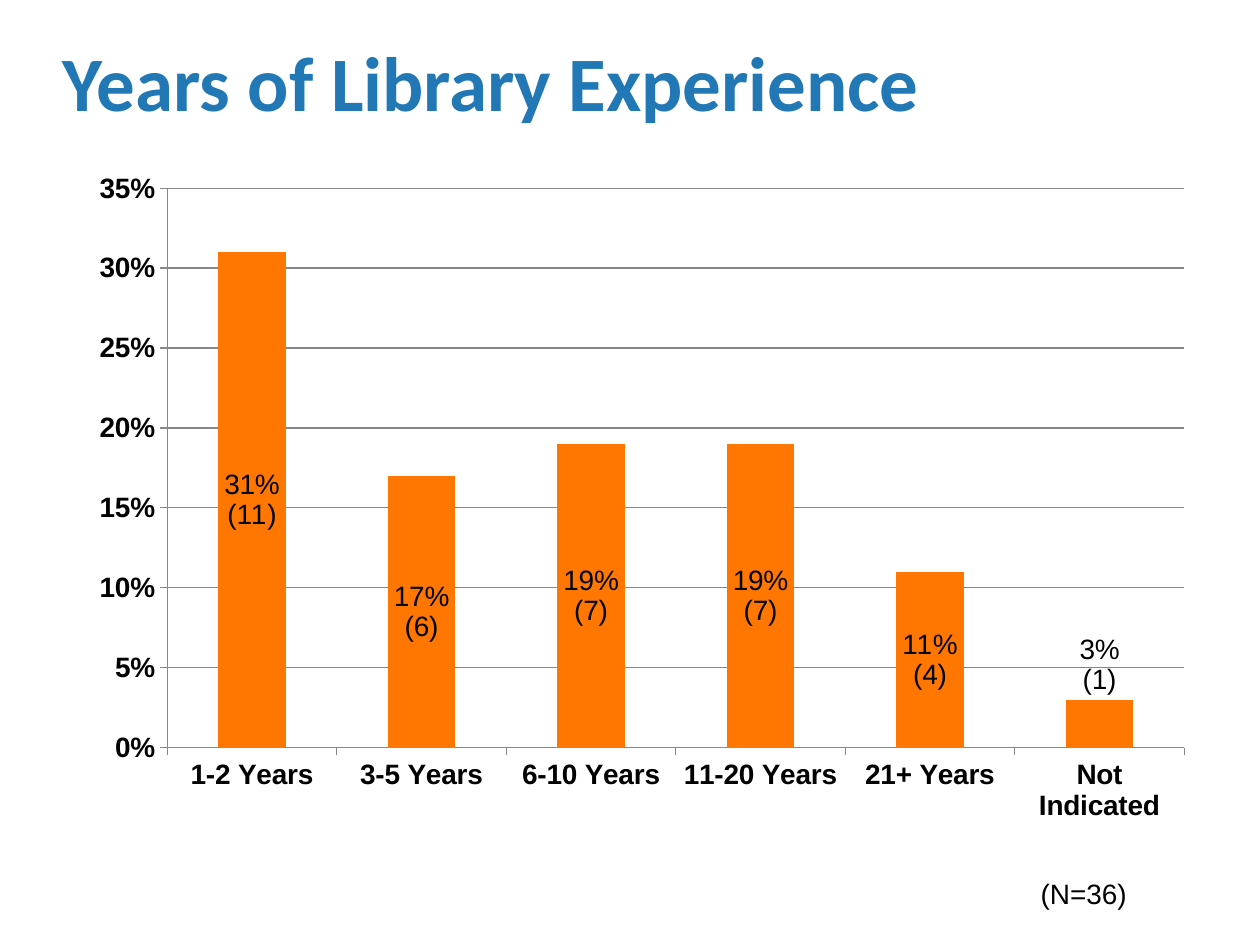
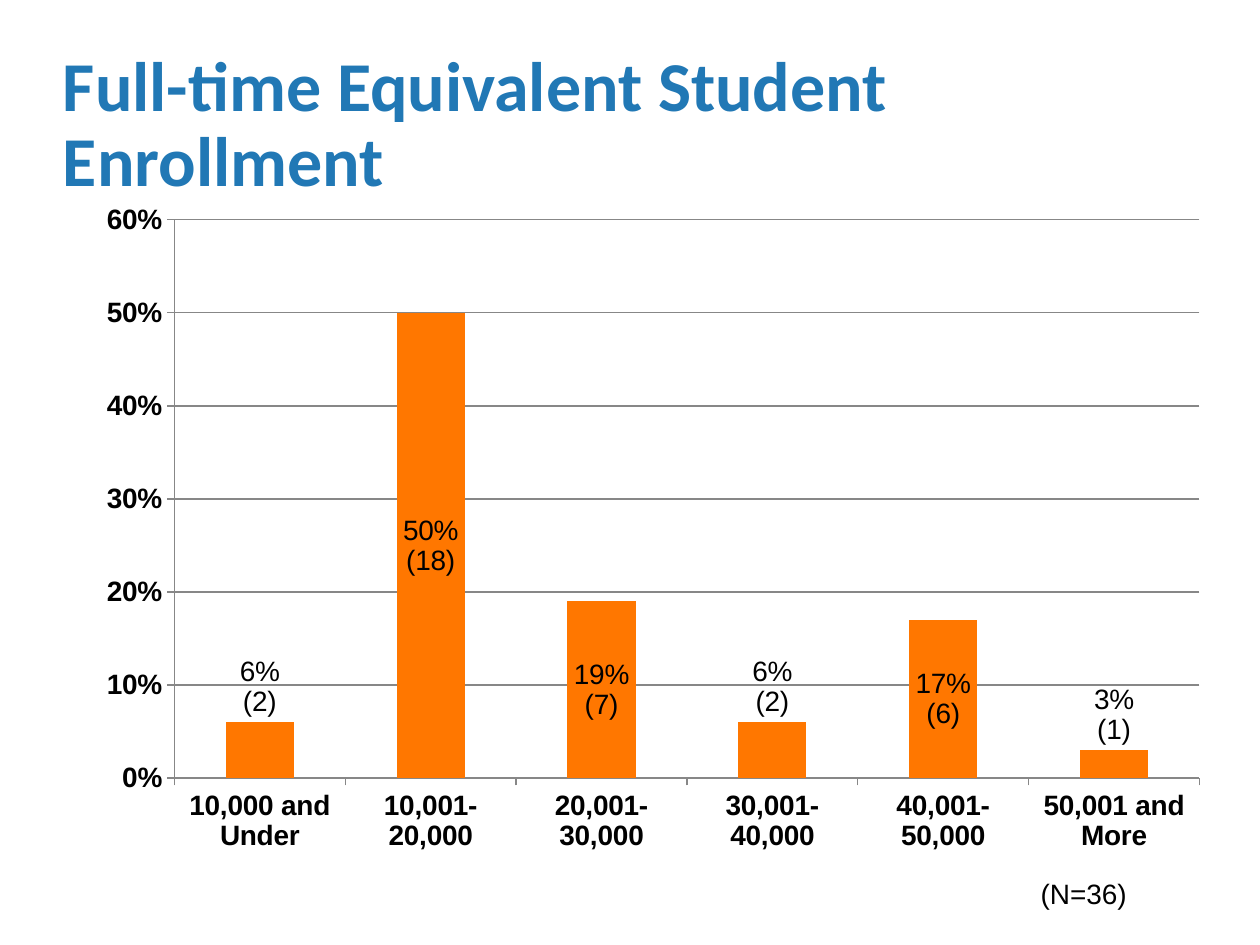
from dataclasses import dataclass

from lxml.etree import SubElement
from pptx import Presentation
from pptx.chart.data import CategoryChartData
from pptx.dml.color import RGBColor
from pptx.enum.chart import XL_CHART_TYPE, XL_LABEL_POSITION, XL_TICK_MARK
from pptx.enum.text import MSO_ANCHOR
from pptx.oxml.ns import qn
from pptx.util import Cm, Pt


@dataclass(frozen=True)
class Theme:
    title_color: RGBColor = RGBColor(0x21, 0x78, 0xB5)
    bar_color: RGBColor = RGBColor(0xFF, 0x77, 0x00)
    line_color: RGBColor = RGBColor(0x87, 0x87, 0x87)
    text_color: RGBColor = RGBColor(0, 0, 0)
    title_font: str = "Calibri"
    body_font: str = "Arial"
    body_size: int = 16


THEME = Theme()
PERCENT = "0%"
RESPONDENTS = 36
LOW_BAR = 0.1  # labels of shorter bars stand above them
PLOT_AREA = {"x": 0.08, "y": 0.04, "w": 0.9, "h": 0.83}  # shares of the chart frame


def style_font(font, size, color, name, bold=False):
    font.size = Pt(size)
    font.color.rgb = color
    font.name = name
    font.bold = bold


def style_body(font, bold=False):
    style_font(font, THEME.body_size, THEME.text_color, THEME.body_font, bold)


def add_text_box(slide, left, top, width, height):
    frame = slide.shapes.add_textbox(Cm(left), Cm(top), Cm(width), Cm(height)).text_frame
    frame.word_wrap = True
    return frame


def add_title(slide, text, size, height):
    frame = add_text_box(slide, 0, 0, 25.4, height)
    frame.vertical_anchor = MSO_ANCHOR.TOP
    frame.margin_left = frame.margin_right = Cm(1.27)
    frame.margin_top, frame.margin_bottom = Cm(1.02), Cm(0.89)
    paragraph = frame.paragraphs[0]
    paragraph.line_spacing = 0.9
    run = paragraph.add_run()
    run.text = text
    style_font(run.font, size, THEME.title_color, THEME.title_font, bold=True)


def add_sample_note(slide):
    frame = add_text_box(slide, 20.73, 17.55, 3.78, 0.94)
    run = frame.paragraphs[0].add_run()
    run.text = f"(N={RESPONDENTS})"
    style_body(run.font)


def style_axis(axis):
    axis.major_tick_mark = XL_TICK_MARK.OUTSIDE
    axis.minor_tick_mark = XL_TICK_MARK.NONE
    axis.format.line.color.rgb = THEME.line_color
    style_body(axis.tick_labels.font, bold=True)


def fix_plot_area(chart):
    plot_area = chart.plots[0]._element.getparent()
    layout = plot_area.find(qn("c:layout"))
    if layout is None:
        layout = SubElement(plot_area, qn("c:layout"))
        plot_area.insert(0, layout)
    manual = SubElement(layout, qn("c:manualLayout"))
    settings = {"layoutTarget": "inner", "xMode": "edge", "yMode": "edge", **PLOT_AREA}
    for name, value in settings.items():
        SubElement(manual, qn(f"c:{name}")).set("val", str(value))


def label_bar(point, share, count):
    label = point.data_label
    frame = label.text_frame
    lines = (f"{share:.0%}", f"({count})")
    for index, line in enumerate(lines):
        paragraph = frame.add_paragraph() if index else frame.paragraphs[0]
        run = paragraph.add_run()
        run.text = line
        style_body(run.font)
    label.position = (XL_LABEL_POSITION.OUTSIDE_END if share < LOW_BAR
                      else XL_LABEL_POSITION.CENTER)


def add_share_chart(slide, box, counts, maximum, step):
    shares = [round(count / RESPONDENTS, 2) for count in counts.values()]
    data = CategoryChartData(number_format=PERCENT)
    data.categories = list(counts)
    data.add_series("Series 1", shares)
    chart = slide.shapes.add_chart(
        XL_CHART_TYPE.COLUMN_CLUSTERED, *(Cm(length) for length in box), data).chart
    chart.has_legend = False
    chart.has_title = False
    style_body(chart.font, bold=True)
    fix_plot_area(chart)

    # Axes and gridlines
    style_axis(chart.category_axis)
    value_axis = chart.value_axis
    style_axis(value_axis)
    value_axis.minimum_scale, value_axis.maximum_scale = 0, maximum
    value_axis.major_unit = step
    value_axis.tick_labels.number_format = PERCENT
    value_axis.tick_labels.number_format_is_linked = False
    value_axis.has_major_gridlines = True
    value_axis.major_gridlines.format.line.color.rgb = THEME.line_color

    # Bars and their labels
    plot = chart.plots[0]
    plot.vary_by_categories = False
    plot.gap_width = 150
    series = plot.series[0]
    series.format.fill.solid()
    series.format.fill.fore_color.rgb = THEME.bar_color
    labels = series.data_labels
    labels.show_value = True
    labels.number_format = PERCENT
    labels.number_format_is_linked = False
    labels.position = XL_LABEL_POSITION.CENTER
    style_body(labels.font)
    for index, (share, count) in enumerate(zip(shares, counts.values())):
        label_bar(series.points[index], share, count)


def add_survey_slide(presentation, title, title_size, title_height, **chart):
    slide = presentation.slides.add_slide(presentation.slide_layouts[6])
    add_title(slide, title, title_size, title_height)
    add_share_chart(slide, **chart)
    add_sample_note(slide)


def main():
    presentation = Presentation()
    presentation.slide_width, presentation.slide_height = Cm(25.4), Cm(19.05)

    # Experience
    add_survey_slide(
        presentation, "Years of Library Experience", 44, 3.38,
        box=(1.55, 3.25, 22.78, 13.59), maximum=0.35, step=0.05,
        counts={"1-2 Years": 11, "3-5 Years": 6, "6-10 Years": 7,
                "11-20 Years": 7, "21+ Years": 4, "Not Indicated": 1})

    # Enrollment
    add_survey_slide(
        presentation, "Full-time Equivalent Student Enrollment", 40, 3.89,
        box=(1.68, 3.89, 22.96, 13.56), maximum=0.6, step=0.1,
        counts={"10,000 and Under": 2, "10,001-20,000": 18, "20,001-30,000": 7,
                "30,001-40,000": 2, "40,001-50,000": 6, "50,001 and More": 1})

    presentation.save("out.pptx")


if __name__ == "__main__":
    main()
